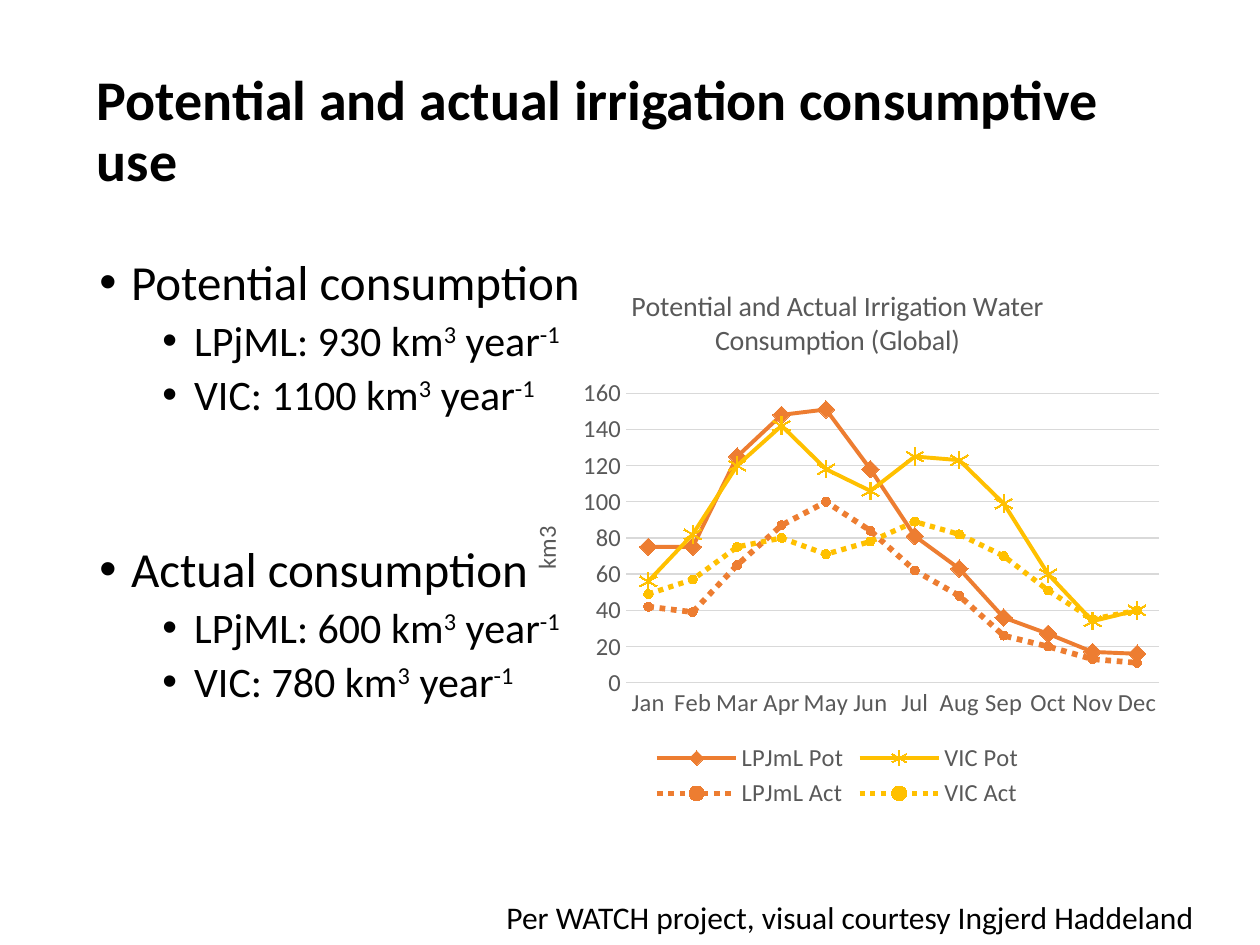
from dataclasses import dataclass

from lxml import etree
from pptx import Presentation
from pptx.chart.data import CategoryChartData
from pptx.dml.color import RGBColor
from pptx.enum.chart import (XL_CHART_TYPE, XL_LEGEND_POSITION,
                             XL_MARKER_STYLE, XL_TICK_MARK)
from pptx.enum.dml import MSO_LINE
from pptx.enum.text import MSO_ANCHOR, MSO_AUTO_SIZE, PP_ALIGN
from pptx.oxml.ns import qn
from pptx.util import Cm, Pt

LINE_MARKERS = XL_CHART_TYPE.LINE_MARKERS
LEGEND_BOTTOM = XL_LEGEND_POSITION.BOTTOM
NO_TICK = XL_TICK_MARK.NONE
DIAMOND, STAR, CIRCLE = (XL_MARKER_STYLE.DIAMOND, XL_MARKER_STYLE.STAR,
                         XL_MARKER_STYLE.CIRCLE)
SOLID, DOTTED = MSO_LINE.SOLID, MSO_LINE.ROUND_DOT
MIDDLE, TOP = MSO_ANCHOR.MIDDLE, MSO_ANCHOR.TOP
NO_FIT = MSO_AUTO_SIZE.NONE
LEFT = PP_ALIGN.LEFT


@dataclass(frozen=True)
class Theme:
    font: str = "Calibri"
    ink: str = "000000"
    chart_ink: str = "595959"
    grid: str = "D9D9D9"
    lpjml: str = "ED7D31"
    vic: str = "FFC000"
    title: int = 32
    topic: int = 28
    detail: int = 24
    caption: int = 18
    chart_title: int = 16
    chart_text: int = 14


THEME = Theme()


@dataclass(frozen=True)
class Frame:
    """Left, top, width and height in centimetres."""
    left: float
    top: float
    width: float
    height: float

    def lengths(self) -> tuple:
        return tuple(Cm(n) for n in (self.left, self.top, self.width, self.height))


@dataclass(frozen=True)
class Topic:
    heading: str
    space_before: int
    amounts: tuple


@dataclass(frozen=True)
class Curve:
    name: str
    values: tuple
    color: str
    width: float
    dash: int
    marker: int
    marker_size: int


TITLE_FRAME = Frame(1.7, 0.84, 22.43, 3.68)
BODY_FRAME = Frame(1.75, 5.08, 21.9, 12.09)
CHART_FRAME = Frame(10.13, 5.33, 13.51, 11.07)
CAPTION_FRAME = Frame(9.96, 17.98, 15.04, 1.02)

TOPICS = (
    Topic("Potential consumption", 10, ("LPjML: 930", "VIC: 1100")),
    Topic("Actual consumption", 72, ("LPjML: 600", "VIC: 780")),
)
MONTHS = "Jan Feb Mar Apr May Jun Jul Aug Sep Oct Nov Dec".split()
CURVES = (
    Curve("LPJmL Pot", (75, 75, 125, 148, 151, 118, 81, 63, 36, 27, 17, 16),
          THEME.lpjml, 2.25, SOLID, DIAMOND, 10),
    Curve("VIC Pot", (56, 82, 120, 142, 118, 106, 125, 123, 99, 60, 34, 40),
          THEME.vic, 2.25, SOLID, STAR, 10),
    Curve("LPJmL Act", (42, 39, 65, 87, 100, 84, 62, 48, 26, 20, 13, 11),
          THEME.lpjml, 3.25, DOTTED, CIRCLE, 5),
    Curve("VIC Act", (49, 57, 75, 80, 71, 78, 89, 82, 70, 51, 35, 40),
          THEME.vic, 3, DOTTED, CIRCLE, 5),
)


def apply(target, formats: dict) -> None:
    for name, value in formats.items():
        setattr(target, name, value)


def style_font(font, size: int, color: str = THEME.ink, bold: bool = False) -> None:
    apply(font, {"name": THEME.font, "size": Pt(size), "bold": bold})
    font.color.rgb = RGBColor.from_string(color)


def place(box, frame: Frame) -> None:
    names = ("left", "top", "width", "height")
    apply(box, dict(zip(names, frame.lengths())))


def add_span(para, text: str, size: int, bold: bool = False,
             raised: bool = False) -> None:
    span = para.add_run()
    span.text = text
    style_font(span.font, size, bold=bold)
    if raised:
        span._r.get_or_add_rPr().set("baseline", "30000")


def format_bullet(para, level: int, space_before: int) -> None:
    apply(para, {"level": level, "line_spacing": 0.9, "alignment": LEFT,
                 "space_before": Pt(space_before)})
    properties = para._p.get_or_add_pPr()
    properties.set("marL", str(Cm(0.64 + 1.27 * level)))
    properties.set("indent", str(-Cm(0.64)))
    etree.SubElement(properties, qn("a:buFont"), typeface="Arial")
    etree.SubElement(properties, qn("a:buChar"), char="•")


def add_title(page) -> None:
    box = page.shapes.title
    place(box, TITLE_FRAME)
    apply(box.text_frame, {"vertical_anchor": MIDDLE, "word_wrap": True,
                           "auto_size": NO_FIT})
    para = box.text_frame.paragraphs[0]
    apply(para, {"alignment": LEFT, "line_spacing": 0.9})
    add_span(para, "Potential and actual irrigation consumptive use",
             THEME.title, bold=True)


def add_topics(page) -> None:
    box = page.placeholders[1]
    place(box, BODY_FRAME)
    frame = box.text_frame
    apply(frame, {"vertical_anchor": TOP, "word_wrap": True, "auto_size": NO_FIT})
    for number, topic in enumerate(TOPICS):
        para = frame.add_paragraph() if number else frame.paragraphs[0]
        format_bullet(para, 0, topic.space_before)
        add_span(para, topic.heading, THEME.topic)
        for amount in topic.amounts:
            para = frame.add_paragraph()
            format_bullet(para, 1, 5)
            for text, raised in ((f"{amount} km", False), ("3", True),
                                 (" year", False), ("-1", True)):
                add_span(para, text, THEME.detail, raised=raised)


def set_heading(owner, text: str, size: int) -> None:
    """Title a chart or an axis."""
    frame = owner.text_frame
    frame.text = text
    style_font(frame.paragraphs[0].runs[0].font, size, THEME.chart_ink)


def style_line(line, color: str, width: float) -> None:
    line.color.rgb = RGBColor.from_string(color)
    line.width = Pt(width)


def style_curve(series, curve: Curve) -> None:
    series.smooth = False
    style_line(series.format.line, curve.color, curve.width)
    series.format.line.dash_style = curve.dash
    marker = series.marker
    apply(marker, {"style": curve.marker, "size": curve.marker_size})
    marker.format.fill.solid()
    marker.format.fill.fore_color.rgb = RGBColor.from_string(curve.color)
    style_line(marker.format.line, curve.color, 0.75)


def add_consumption_chart(page) -> None:
    data = CategoryChartData()
    data.categories = MONTHS
    for curve in CURVES:
        data.add_series(curve.name, curve.values)
    chart = page.shapes.add_chart(LINE_MARKERS, *CHART_FRAME.lengths(), data).chart
    style_font(chart.font, THEME.chart_text, THEME.chart_ink)
    set_heading(chart.chart_title,
                "Potential and Actual Irrigation Water Consumption (Global)",
                THEME.chart_title)
    chart.has_legend = True
    apply(chart.legend, {"position": LEGEND_BOTTOM, "include_in_layout": False})
    style_font(chart.legend.font, THEME.chart_text, THEME.chart_ink)
    months, volume = chart.category_axis, chart.value_axis
    for axis in (months, volume):
        apply(axis, {"major_tick_mark": NO_TICK, "minor_tick_mark": NO_TICK})
        style_font(axis.tick_labels.font, THEME.chart_text, THEME.chart_ink)
    style_line(months.format.line, THEME.grid, 0.75)
    volume.format.line.fill.background()
    apply(volume, {"minimum_scale": 0, "maximum_scale": 160, "major_unit": 20})
    style_line(volume.major_gridlines.format.line, THEME.grid, 0.75)
    set_heading(volume.axis_title, "km3", THEME.chart_text)
    chart.plots[0].vary_by_categories = False
    for series, curve in zip(chart.plots[0].series, CURVES):
        style_curve(series, curve)


def add_caption(page) -> None:
    box = page.shapes.add_textbox(*CAPTION_FRAME.lengths())
    box.text_frame.word_wrap = True
    add_span(box.text_frame.paragraphs[0],
             "Per WATCH project, visual courtesy Ingjerd Haddeland", THEME.caption)


def main() -> None:
    deck = Presentation()
    apply(deck, {"slide_width": Cm(25.4), "slide_height": Cm(19.05)})
    page = deck.slides.add_slide(deck.slide_layouts[1])
    for draw in (add_title, add_topics, add_consumption_chart, add_caption):
        draw(page)
    deck.save("out.pptx")


if __name__ == "__main__":
    main()
